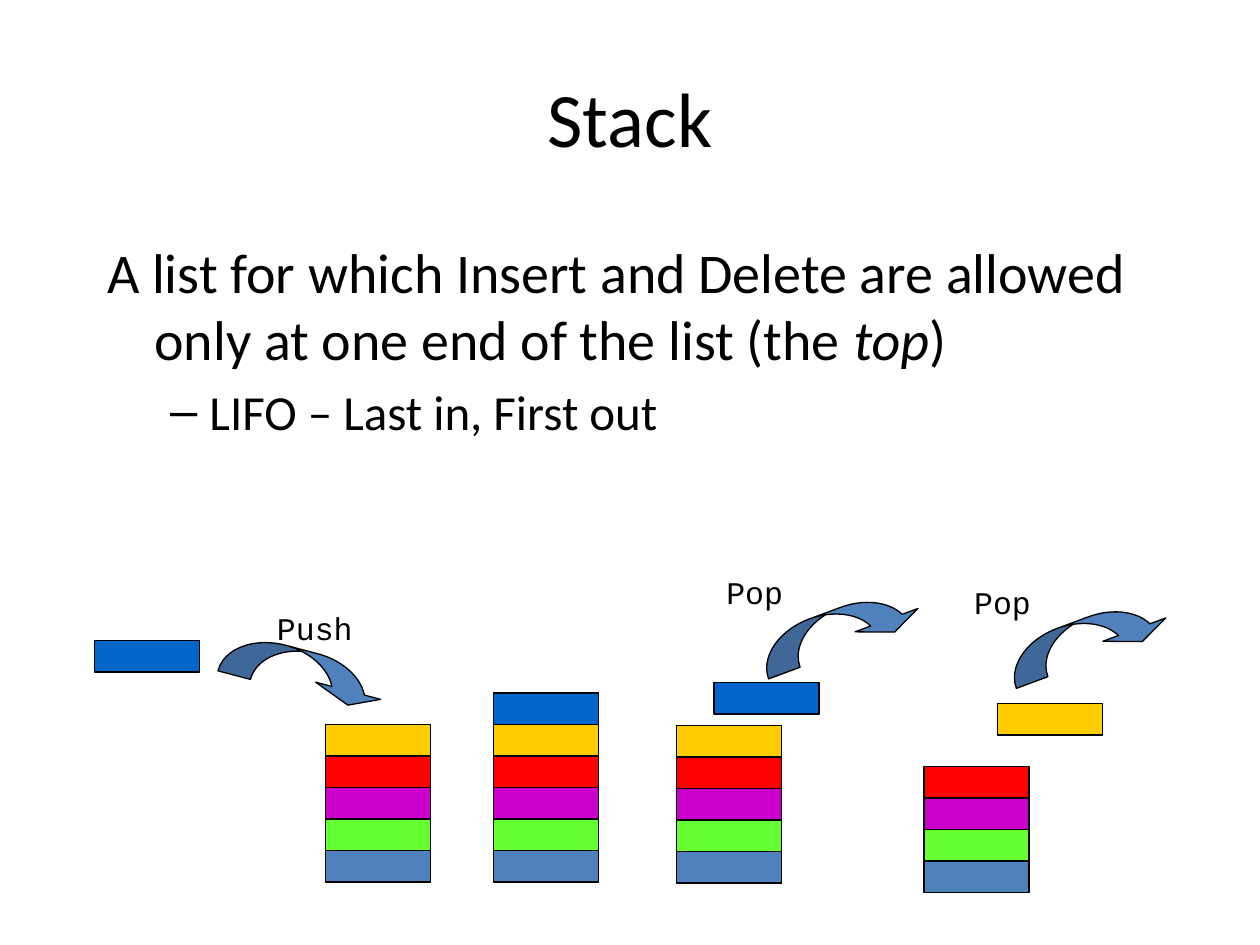
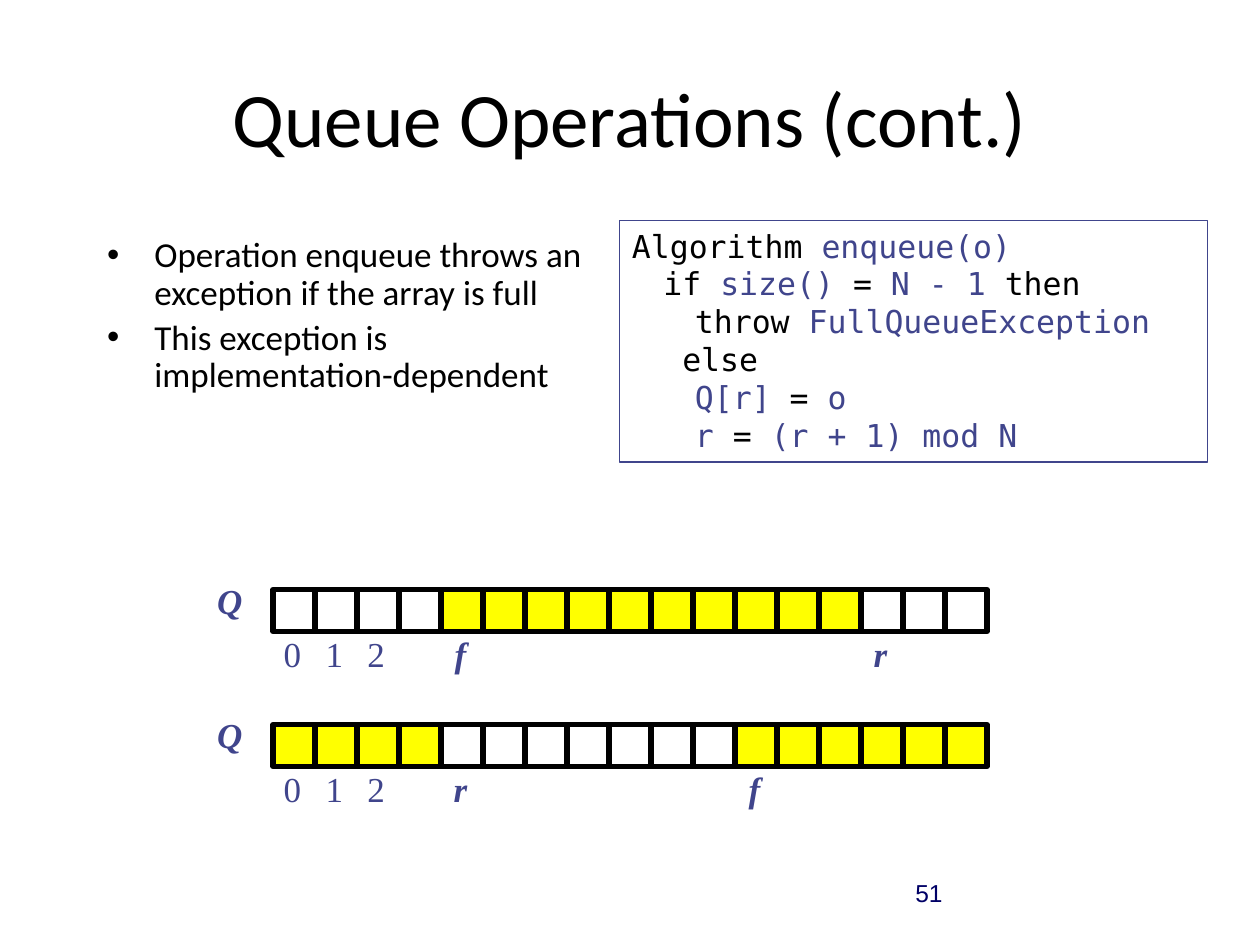
from lxml.etree import SubElement
from pptx import Presentation
from pptx.dml.color import RGBColor
from pptx.enum.shapes import MSO_SHAPE
from pptx.enum.text import MSO_ANCHOR, PP_ALIGN
from pptx.oxml.ns import qn
from pptx.util import Inches, Pt

# Shared style: a grid of 120 columns by 90 rows, so one unit is 1/12 inch
COLUMNS, ROWS = 120, 90
BLACK, WHITE, YELLOW = "000000", "FFFFFF", "FFFF00"
INDIGO, NAVY = "40458C", "000066"
STEEL, GREEN, PURPLE, RED, GOLD, BLUE = (
    "4F81BD", "66FF33", "CC00CC", "FF0000", "FFCC00", "0066CC")
SANS, SERIF, TYPEWRITER, CODE = (
    "Calibri", "Times New Roman", "Courier New", "DejaVu Sans Mono")


def rgb(hex_code):
    return RGBColor.from_string(hex_code)


class Deck:
    """Holds the style, the current slide and the shapes being drawn on."""

    def __init__(self):
        self.file = Presentation()
        self.file.slide_width, self.file.slide_height = Inches(10), Inches(7.5)
        self.column = self.file.slide_width / COLUMNS
        self.row = self.file.slide_height / ROWS

    def place(self, left, top, width, height):
        return (round(left * self.column), round(top * self.row),
                round(width * self.column), round(height * self.row))

    def move(self, placeholder, *area):
        (placeholder.left, placeholder.top,
         placeholder.width, placeholder.height) = self.place(*area)

    def style(self, paragraph, size, font=SANS, color=BLACK, strong=None):
        for run in paragraph.runs:
            run.font.size, run.font.name = Pt(size), font
            run.font.color.rgb = rgb(color)
            run.font.bold = run.font.italic = strong

    def indent(self, paragraph, margin, hanging=0.0):
        properties = paragraph._p.get_or_add_pPr()
        properties.set("marL", str(round(margin * self.column)))
        properties.set("indent", str(round(-hanging * self.column)))
        return properties

    def new_slide(self, heading):
        self.slide = self.file.slides.add_slide(self.file.slide_layouts[1])
        self.shapes = self.slide.shapes
        title = self.shapes.title
        self.move(title, 6, 3.6, 108, 15)
        title.text_frame.text = heading
        self.style(title.text_frame.paragraphs[0], 44)

    def body(self, area, items):
        """Fill the body placeholder with (text, level, size) items."""
        body = self.slide.placeholders[1]
        self.move(body, *area)
        body.text_frame.text = "\n".join(text for text, _, _ in items)
        for paragraph, (_, level, size) in zip(body.text_frame.paragraphs, items):
            paragraph.level = level
            self.indent(paragraph, *((9.75, 3.75) if level else (4.5, 4.5)))
            self.style(paragraph, size)
        return body.text_frame.paragraphs

    def group(self):
        self.shapes = self.slide.shapes.add_group_shape().shapes

    def shape(self, area, fill, line=BLACK, weight=0.75, kind=MSO_SHAPE.RECTANGLE):
        shape = self.shapes.add_shape(kind, *self.place(*area))
        shape.shadow.inherit = False
        if fill:
            shape.fill.solid()
            shape.fill.fore_color.rgb = rgb(fill)
        else:
            shape.fill.background()
        shape.line.color.rgb = rgb(line)
        shape.line.width = Pt(weight)
        return shape

    def label(self, area, text, size, font, color=BLACK, strong=None,
              align=PP_ALIGN.LEFT, anchor=MSO_ANCHOR.TOP, tight=False):
        frame = self.shapes.add_textbox(*self.place(*area)).text_frame
        frame.word_wrap, frame.vertical_anchor = True, anchor
        if tight:
            frame.margin_left = frame.margin_right = 0
            frame.margin_top = frame.margin_bottom = 0
        frame.text = text
        frame.paragraphs[0].alignment = align
        self.style(frame.paragraphs[0], size, font, color, strong)

    def block(self, left, top, color):
        self.shape((left, top, 10, 3), color)

    def stack(self, left, base, colors):
        """Pile blocks upwards; base is the top of the lowest one."""
        for level, color in enumerate(colors):
            self.block(left, base - 3 * level, color)

    def move_arrow(self, left, top, turn, name, name_left, name_top):
        arrow = self.shape((left, top, 16, 4), STEEL, kind=MSO_SHAPE.CURVED_DOWN_ARROW)
        arrow.rotation = turn
        for index, value in enumerate((0.8, 1.6, 0.333)):
            arrow.adjustments[index] = value
        self.label((name_left, name_top, 12, 6), name, 18, TYPEWRITER)

    def code(self, area, lines):
        """Each line is an indent and pieces that alternate black and indigo."""
        frame = self.shape(area, None, INDIGO).text_frame
        frame.word_wrap, frame.vertical_anchor = True, MSO_ANCHOR.TOP
        frame.text = "\n" * (len(lines) - 1)
        for paragraph, (margin, *pieces) in zip(frame.paragraphs, lines):
            paragraph.alignment = PP_ALIGN.LEFT
            self.indent(paragraph, margin)
            for index, piece in enumerate(pieces):
                if piece:
                    run = paragraph.add_run()
                    run.text = piece
                    run.font.size, run.font.name = Pt(18), CODE
                    run.font.color.rgb = rgb(INDIGO if index % 2 else BLACK)

    def queue(self, top, filled, front, rear, cells=17, left=26, side=4):
        """Draw the array Q with its indices and its front and rear marks."""
        self.group()
        pointer = dict(size=20, font=SERIF, color=INDIGO, strong=True,
                       align=PP_ALIGN.CENTER, tight=True)
        self.label((left - 6, top - 1, 3.8, 4.8), "Q", **pointer)
        for index in range(3):
            self.label((left + 1 + side * index, top + side + 0.1, 2, 4.8),
                       str(index), 20, SERIF, INDIGO, tight=True)
        for name, cell in (("f", front), ("r", rear)):
            self.label((left + side * cell, top + side + 0.1, 3.7, 4.8),
                       name, **pointer)
        for cell in range(cells):
            self.shape((left + side * cell, top, side, side),
                       YELLOW if cell in filled else WHITE, weight=3)


def stack_slide(deck):
    deck.new_slide("Stack")
    definition, _ = deck.body((9, 22, 108, 63), [
        ("A list for which Insert and Delete are allowed only at one end "
         "of the list (the ", 0, 32),
        ("LIFO – Last in, First out", 1, 28)])
    SubElement(definition._p.get_or_add_pPr(), qn("a:buNone"))
    for text in ("top", ")"):
        definition.add_run().text = text
    deck.style(definition, 32)
    definition.runs[1].font.italic = True

    # The stack before and after a push, then after each of two pops
    pile = [STEEL, GREEN, PURPLE, RED, GOLD, BLUE]
    for left, base, height in ((31, 81, 5), (47, 81, 6), (64.4, 81.1, 5), (88, 82, 4)):
        deck.stack(left, base, pile[:height])

    # Blocks on the move
    for left, top, color in ((9, 61, BLUE), (68, 65, BLUE), (95, 67, GOLD)):
        deck.block(left, top, color)
    deck.move_arrow(21, 62, 14.8, "Push", 25.2, 57.4)
    deck.move_arrow(72, 58, 339.6, "Pop", 68, 54)
    deck.move_arrow(95.6, 58.9, 339.6, "Pop", 91.6, 54.9)


def queue_slide(deck):
    deck.new_slide("Queue Operations (cont.)")
    deck.label((86, 82, 25, 6), "51", 14, "Arial", NAVY, anchor=MSO_ANCHOR.MIDDLE)
    deck.code((59, 21, 56, 23), [
        (0, "Algorithm ", "enqueue(o)"),
        (3, "if ", "size() ", "= ", "N - 1 ", "then"),
        (6, "throw ", "FullQueueException"),
        (4.8, "else"),
        (6, "", "Q[r] ", "= ", "o"),
        (6, "", "r ", "= ", "(r + 1) mod N")])
    for point in deck.body((9, 22, 49, 28), [
            ("Operation enqueue throws an exception if the array is full", 0, 20),
            ("This exception is implementation-dependent", 0, 20)]):
        point.line_spacing = 0.9

    # The normal and the wrapped-around configuration
    deck.queue(56.15, range(4, 14), front=4, rear=14)
    deck.queue(69, [*range(4), *range(11, 17)], front=11, rear=4)


def main():
    deck = Deck()
    stack_slide(deck)
    queue_slide(deck)
    deck.file.save("out.pptx")


if __name__ == "__main__":
    main()
